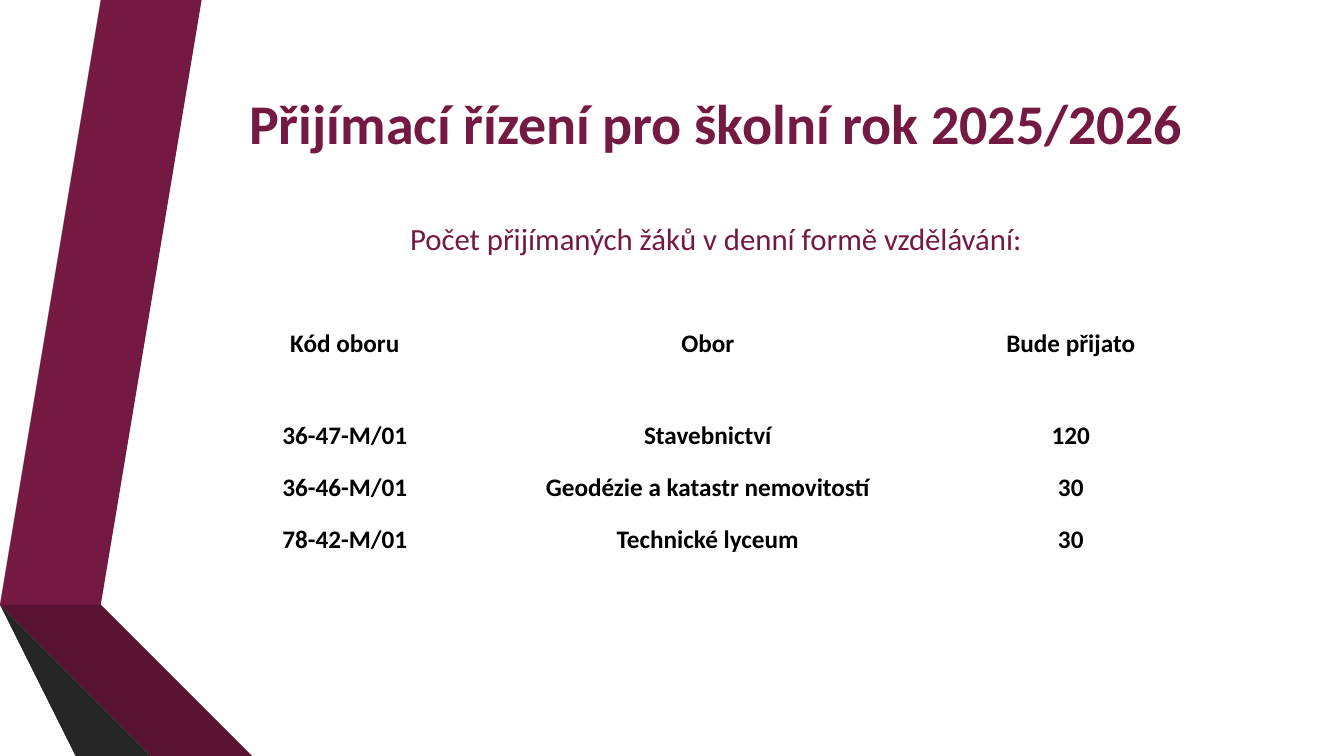
from pptx import Presentation
from pptx.dml.color import RGBColor
from pptx.enum.text import MSO_ANCHOR, MSO_AUTO_SIZE, PP_ALIGN
from pptx.util import Inches, Pt

MIDDLE = MSO_ANCHOR.MIDDLE
CENTER = PP_ALIGN.CENTER
NO_FIT = MSO_AUTO_SIZE.NONE
TITLE_ONLY = 5
FONT = "Calibri"
COLORS = {
    "wine": "741942",
    "dark wine": "571331",
    "deep wine": "3A0D21",
    "gray": "595959",
    "dark gray": "404040",
    "deep gray": "262626",
    "black": "000000",
}
BANDS = [
    ("wine", [(0.5, 5.78), (0.77, 5.83), (1.73, 0), (1.45, 0)]),
    ("gray", [(1.39, 0), (1.11, 0), (0.16, 5.73), (0.44, 5.77)]),
    ("deep gray", [(0.16, 5.73), (1.45, 7.5), (1.51, 7.5)]),
    ("deep wine", [(0.5, 5.79), (2.08, 7.5), (2.14, 7.5)]),
    ("dark wine", [(0.5, 5.79), (2.14, 7.5), (2.83, 7.5), (0.77, 5.83), (0.5, 5.78)]),
    ("dark gray", [(2.02, 7.5), (0.48, 5.83), (0.43, 5.78), (0.44, 5.77),
                   (0.16, 5.73), (1.51, 7.5)]),
]
ROWS = [
    ("Kód oboru", "Obor", "Bude přijato"),
    ("36-47-M/01", "Stavebnictví", "120"),
    ("36-46-M/01", "Geodézie a katastr nemovitostí", "30"),
    ("78-42-M/01", "Technické lyceum", "30"),
]


def color(name):
    return RGBColor.from_string(COLORS[name])


def style(para, size, tone, bold):
    para.alignment = CENTER
    for run in para.runs:
        font = run.font
        font.name = FONT
        font.size = Pt(size)
        font.bold = bold
        font.color.rgb = color(tone)


def add_band(slide, tone, points):
    pen = slide.shapes.build_freeform(*points[0], scale=Inches(1))
    pen.add_line_segments(points[1:], close=True)
    band = pen.convert_to_shape()
    band.shadow.inherit = False
    band.fill.solid()
    band.fill.fore_color.rgb = color(tone)
    band.line.fill.background()


def set_title(slide, head, lead):
    title = slide.shapes.title
    title.left, title.top = Inches(1.62), Inches(0.75)
    title.width, title.height = Inches(10.96), Inches(1.92)
    frame = title.text_frame
    frame.text = f"{head}\n{lead}"
    frame.word_wrap = True
    frame.auto_size = NO_FIT
    frame.vertical_anchor = MIDDLE
    first, second = frame.paragraphs
    style(first, 40, "wine", True)
    style(second, 22, "wine", False)
    first.space_before = Pt(0)
    second.space_before = Pt(46)


def add_grid(slide, rows):
    count = len(rows)
    grid = slide.shapes.add_table(
        count, len(rows[0]), Inches(1.62), Inches(2.76), Inches(10.8), Inches(2.86)
    ).table
    grid.first_row = False
    grid.horz_banding = False
    for r, texts in enumerate(rows):
        grid.rows[r].height = Inches(0.52 if r else 1.3)
        for c, text in enumerate(texts):
            cell = grid.cell(r, c)
            cell.text = text
            cell.fill.background()
            cell.vertical_anchor = MIDDLE
            style(cell.text_frame.paragraphs[0], 18, "black", True)


def main():
    deck = Presentation()
    deck.slide_width, deck.slide_height = Inches(13.33), Inches(7.5)
    slide = deck.slides.add_slide(deck.slide_layouts[TITLE_ONLY])
    for tone, points in BANDS:
        add_band(slide, tone, points)
    set_title(slide, "Přijímací řízení pro školní rok 2025/2026",
              "Počet přijímaných žáků v denní formě vzdělávání:")
    add_grid(slide, ROWS)
    deck.save("out.pptx")


if __name__ == "__main__":
    main()
